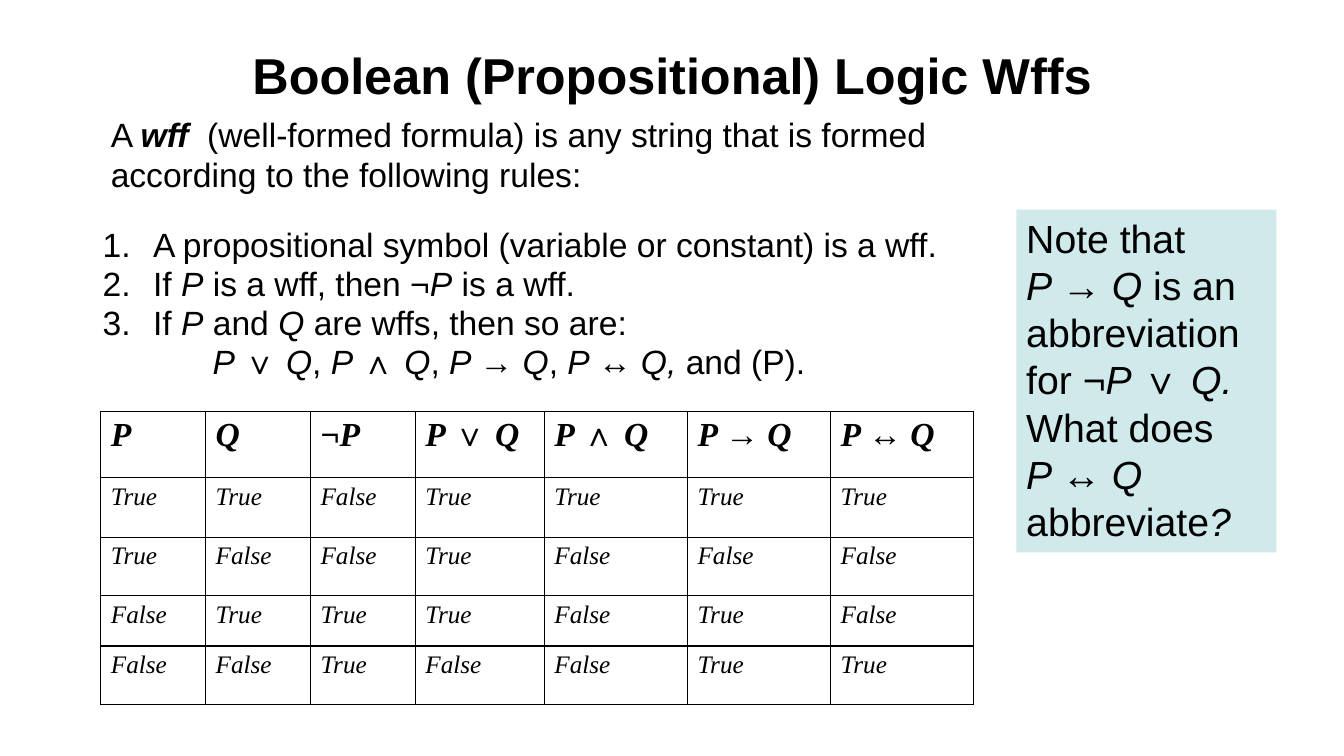
import pptx
import pptx.util
import pptx.dml.color
import pptx.enum.text
import pptx.enum.shapes
import pptx.oxml.ns
from lxml import etree

Inches, Pt = pptx.util.Inches, pptx.util.Pt
RGB = pptx.dml.color.RGBColor.from_string
ALIGN = pptx.enum.text.PP_ALIGN
ANCHOR = pptx.enum.text.MSO_ANCHOR
qn = pptx.oxml.ns.qn

# Content: *...* is italic, **...** is bold italic, a newline is a line break
TITLE = "Boolean (Propositional) Logic Wffs"
INTRO = ("A **wff**  (well-formed formula) is any string that is formed "
         "according to the following rules:")
RULES = [
    "A propositional symbol (variable or constant) is a wff.",
    "If *P* is a wff, then ¬*P* is a wff.",
    "If *P* and *Q* are wffs, then so are:",
]
FORMS = "*P *∨ *Q*, *P *∧ *Q*, *P *→ *Q*, *P *↔ *Q, *and (P)."
NOTE = ("Note that\n*P *→ *Q *is an abbreviation for ¬*P *∨ *Q.* "
        "What does\n*P *↔ *Q *abbreviate*?*")
HEADS = ["*P*", "*Q*", "¬*P*", "*P *∨ *Q*", "*P *∧ *Q*", "*P *→ *Q*", "*P *↔ *Q*"]
TRUTH = ["TTFTTTT", "TFFTFFF", "FTTTFTF", "FFTFFTT"]
WORDS = {"T": "*True*", "F": "*False*"}
COLS = [1.04, 1.04, 1.04, 1.28, 1.42, 1.42, 1.42]
ROWS = [0.66, 0.59, 0.58, 0.5, 0.58]

THEME = {
    "sans": "Arial", "serif": "Times New Roman", "ink": "000000", "note": "D0EAEC",
    "title": 36, "body": 24, "aside": 28, "cell": 18,
}


def write(para, text, size, face="sans", bold=None):
    """Fill a paragraph from marked text."""
    font = para.font
    font.size, font.name, font.bold = Pt(size), THEME[face], bold
    font.color.rgb = RGB(THEME["ink"])
    strong = slant = False
    for part in text.replace("**", "#*").split("*"):
        flip = part.endswith("#")
        for i, line in enumerate(part.rstrip("#").split("\n")):
            if i:
                para.add_line_break()
            if line:
                run = para.add_run()
                run.text = line
                if slant:
                    run.font.italic = True
                if strong:
                    run.font.bold = True
        strong ^= flip
        slant = not slant


def indent(para, left, first):
    props = para._p.get_or_add_pPr()
    props.set("marL", str(Inches(left)))
    props.set("indent", str(Inches(first)))
    return props


def add_box(*place):
    frame = slide.shapes.add_textbox(*map(Inches, place)).text_frame
    frame.word_wrap = True
    return frame


def edge(cell):
    props = cell._tc.get_or_add_tcPr()
    for i, side in enumerate(("lnL", "lnR", "lnT", "lnB")):
        line = etree.Element(qn("a:" + side), w=str(Pt(1)))
        fill = etree.SubElement(line, qn("a:solidFill"))
        etree.SubElement(fill, qn("a:srgbClr"), val=THEME["ink"])
        props.insert(i, line)


deck = pptx.Presentation()
deck.slide_width, deck.slide_height = Inches(13.33), Inches(7.5)
slide = deck.slides.add_slide(deck.slide_layouts[6])

# Title
frame = add_box(2.17, 0.3, 9, 0.87)
frame.vertical_anchor = ANCHOR.MIDDLE
frame.paragraphs[0].alignment = ALIGN.CENTER
write(frame.paragraphs[0], TITLE, THEME["title"], bold=True)

# Numbered rules, then the compound forms
frame = add_box(0.92, 2.25, 8.75, 1.75)
for i, text in enumerate(RULES + [FORMS]):
    para = frame.add_paragraph() if i else frame.paragraphs[0]
    para.line_spacing = 0.8
    if i:
        para.space_before = Pt(4.8)
    if text == FORMS:
        para.level = 1
        indent(para, 1.09, 0)
    else:
        props = indent(para, 0.5, -0.5)
        etree.SubElement(props, qn("a:buFont"), typeface=THEME["sans"])
        etree.SubElement(props, qn("a:buAutoNum"), type="arabicPeriod")
    write(para, text, THEME["body"])

# Definition
write(add_box(1, 1.08, 8.75, 0.91).paragraphs[0], INTRO, THEME["body"])

# Truth table
cells = [HEADS] + [[WORDS[mark] for mark in row] for row in TRUTH]
grid = slide.shapes.add_table(len(ROWS), len(COLS), Inches(1), Inches(4.08),
                              Inches(sum(COLS)), Inches(sum(ROWS))).table
grid.first_row = grid.horz_banding = False
for col, width in zip(grid.columns, COLS):
    col.width = Inches(width)
for r, row in enumerate(cells):
    grid.rows[r].height = Inches(ROWS[r])
    for c, text in enumerate(row):
        cell = grid.cell(r, c)
        cell.fill.background()
        edge(cell)
        para = cell.text_frame.paragraphs[0]
        para.alignment = ALIGN.JUSTIFY
        indent(para, 0.38, -0.38)
        write(para, text, THEME["cell" if r else "body"], "serif", bold=r == 0)

# Side note
note = slide.shapes.add_shape(pptx.enum.shapes.MSO_SHAPE.RECTANGLE,
                              *map(Inches, (10.08, 2.08, 2.58, 3.4)))
note.shadow.inherit = False
note.fill.solid()
note.fill.fore_color.rgb = RGB(THEME["note"])
note.line.fill.background()
frame = note.text_frame
frame.word_wrap = True
frame.vertical_anchor = ANCHOR.TOP
frame.paragraphs[0].alignment = ALIGN.LEFT
write(frame.paragraphs[0], NOTE, THEME["aside"])

deck.save("out.pptx")
